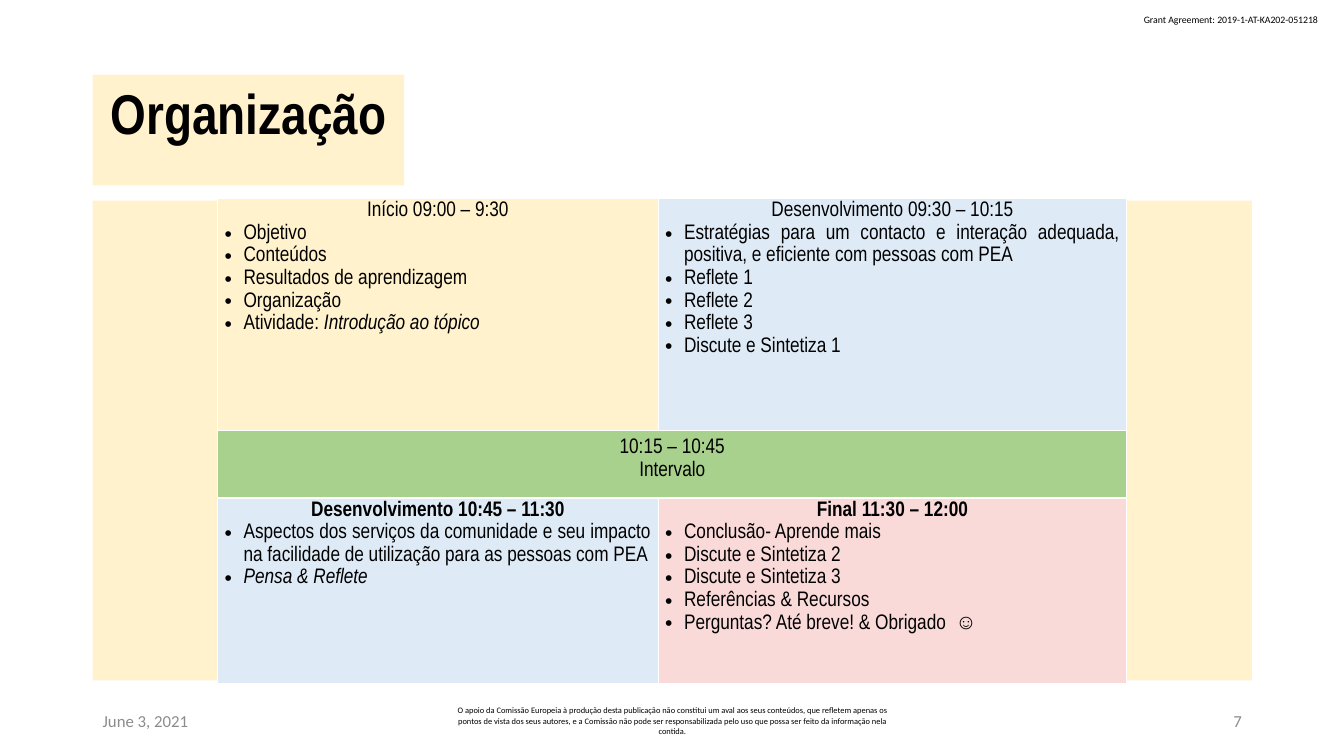
from dataclasses import dataclass

from lxml import etree
from pptx import Presentation
from pptx.dml.color import RGBColor
from pptx.enum import shapes, text
from pptx.oxml import ns
from pptx.util import Pt

BLACK = RGBColor(0x00, 0x00, 0x00)
GRAY = RGBColor(0x8C, 0x8C, 0x8C)
WHITE = RGBColor(0xFF, 0xFF, 0xFF)
CREAM = RGBColor(0xFF, 0xF2, 0xCC)
BLUE = RGBColor(0xDE, 0xEB, 0xF7)
GREEN = RGBColor(0xA9, 0xD1, 0x8E)
PINK = RGBColor(0xF9, 0xDA, 0xD9)

LEFT, CENTER, RIGHT, JUSTIFY = (
    text.PP_ALIGN.LEFT, text.PP_ALIGN.CENTER, text.PP_ALIGN.RIGHT, text.PP_ALIGN.JUSTIFY)
HEADING_FONT, SMALL_FONT = "Arial Narrow", "Calibri"
MARGIN = 66.24
BULLET_INDENT = 13.5


@dataclass
class Item:
    plain: str
    italic: str = ""


@dataclass
class Session:
    row: int
    column: int
    color: RGBColor
    headings: list[str]
    items: list[Item]
    bold: bool = False
    alignment: text.PP_ALIGN = LEFT


@dataclass
class Label:
    words: str
    left: float
    top: float
    width: float
    height: float
    size: float
    color: RGBColor
    alignment: text.PP_ALIGN
    wrap: bool = True


SESSIONS = [
    Session(0, 0, CREAM, ["Início 09:00 – 9:30"], [
        Item("Objetivo"), Item("Conteúdos"), Item("Resultados de aprendizagem"),
        Item("Organização"), Item("Atividade: ", "Introdução ao tópico")]),
    Session(0, 1, BLUE, ["Desenvolvimento 09:30 – 10:15"], [
        Item("Estratégias para um contacto e interação adequada, positiva, "
             "e eficiente com pessoas com PEA"),
        Item("Reflete 1"), Item("Reflete 2"), Item("Reflete 3"),
        Item("Discute e Sintetiza 1")], alignment=JUSTIFY),
    Session(1, 0, GREEN, ["10:15 – 10:45", "Intervalo"], []),
    Session(2, 0, BLUE, ["Desenvolvimento 10:45 – 11:30"], [
        Item("Aspectos dos serviços da comunidade e seu impacto na facilidade "
             "de utilização para as pessoas com PEA"),
        Item("", "Pensa & Reflete")], bold=True, alignment=JUSTIFY),
    Session(2, 1, PINK, ["Final 11:30 – 12:00"], [
        Item("Conclusão- Aprende mais"), Item("Discute e Sintetiza 2"),
        Item("Discute e Sintetiza 3"), Item("Referências & Recursos"),
        Item("Perguntas? Até breve! & Obrigado  ☺")], bold=True),
]

LABELS = [
    Label("Grant Agreement: 2019-1-AT-KA202-051218", 810, 5.76, 141.84, 15.84,
          7, BLACK, LEFT, wrap=False),
    Label("June 3, 2021", MARGIN, 500.4, 216, 28.8, 12, GRAY, LEFT),
    Label("O apoio da Comissão Europeia à produção desta publicação não constitui um aval "
          "aos seus conteúdos, que refletem apenas os pontos de vista dos seus autores, e a "
          "Comissão não pode ser responsabilizada pelo uso que possa ser feito da "
          "informação nela contida.", 318.24, 500.4, 324, 28.8, 6, BLACK, CENTER),
    Label("7", 678.24, 500.4, 216, 28.8, 12, GRAY, RIGHT),
]


def style(paragraph, name: str, size: float, color: RGBColor, bold: bool = False) -> None:
    font = paragraph.font
    font.name, font.size, font.bold = name, Pt(size), bold
    font.color.rgb = color


def add_bullet(paragraph) -> None:
    properties = paragraph._p.get_or_add_pPr()
    properties.set("marL", str(Pt(BULLET_INDENT)))
    properties.set("indent", str(-Pt(BULLET_INDENT)))
    etree.SubElement(properties, ns.qn("a:buFont"), typeface="Arial")
    etree.SubElement(properties, ns.qn("a:buChar"), char="•")


def add_borders(cell) -> None:
    properties = cell._tc.get_or_add_tcPr()
    for side in ("lnL", "lnR", "lnT", "lnB"):
        line = etree.SubElement(properties, ns.qn(f"a:{side}"), w=str(Pt(1)))
        fill = etree.SubElement(line, ns.qn("a:solidFill"))
        etree.SubElement(fill, ns.qn("a:srgbClr"), val=str(WHITE))


def fill_session(cell, session: Session) -> None:
    cell.fill.solid()
    cell.fill.fore_color.rgb = session.color
    side, edge = (5, 0) if session.items else (7.2, 3.6)
    cell.margin_left = cell.margin_right = Pt(side)
    cell.margin_top = cell.margin_bottom = Pt(edge)
    frame = cell.text_frame
    entries = [Item(heading) for heading in session.headings] + session.items
    for index, item in enumerate(entries):
        paragraph = frame.paragraphs[0] if index == 0 else frame.add_paragraph()
        is_heading = index < len(session.headings)
        paragraph.alignment = CENTER if is_heading else session.alignment
        paragraph.line_spacing = 1.15
        if not is_heading:
            add_bullet(paragraph)
        style(paragraph, HEADING_FONT, 15, BLACK, is_heading and session.bold)
        if item.plain:
            paragraph.add_run().text = item.plain
        if item.italic:
            run = paragraph.add_run()
            run.text = item.italic
            run.font.italic = True


def add_schedule(slide) -> None:
    widths, heights = (314.64, 334.8), (165.6, 48.24, 132.48)
    frame = slide.shapes.add_table(
        len(heights), len(widths), Pt(155.52), Pt(141.84), Pt(sum(widths)), Pt(sum(heights)))
    table = frame.table
    table.first_row = table.horz_banding = False
    for column, width in zip(table.columns, widths):
        column.width = Pt(width)
    for row, height in zip(table.rows, heights):
        row.height = Pt(height)
    table.cell(1, 0).merge(table.cell(1, 1))
    for cell in table.iter_cells():
        add_borders(cell)
    for session in SESSIONS:
        fill_session(table.cell(session.row, session.column), session)


def add_label(slide, label: Label) -> None:
    box = slide.shapes.add_textbox(
        Pt(label.left), Pt(label.top), Pt(label.width), Pt(label.height))
    frame = box.text_frame
    frame.word_wrap = label.wrap
    frame.vertical_anchor = text.MSO_ANCHOR.MIDDLE
    paragraph = frame.paragraphs[0]
    paragraph.text = label.words
    paragraph.alignment = label.alignment
    style(paragraph, SMALL_FONT, label.size, label.color)


def format_title(title) -> None:
    title.left, title.top, title.width, title.height = (
        Pt(MARGIN), Pt(53.28), Pt(222.48), Pt(79.2))
    title.fill.solid()
    title.fill.fore_color.rgb = CREAM
    frame = title.text_frame
    frame.auto_size = text.MSO_AUTO_SIZE.NONE
    frame.word_wrap = True
    frame.vertical_anchor = text.MSO_ANCHOR.TOP
    frame.margin_left = frame.margin_right = Pt(9)
    frame.margin_top = frame.margin_bottom = Pt(3)
    paragraph = frame.paragraphs[0]
    paragraph.text = "Organização"
    paragraph.alignment = CENTER
    paragraph.line_spacing = 1.0
    style(paragraph, HEADING_FONT, 40, BLACK, bold=True)


def main() -> None:
    presentation = Presentation()
    presentation.slide_width, presentation.slide_height = Pt(960), Pt(540)
    slide = presentation.slides.add_slide(presentation.slide_layouts[5])
    format_title(slide.shapes.title)
    panel = slide.shapes.add_shape(
        shapes.MSO_SHAPE.RECTANGLE, Pt(MARGIN), Pt(143.28), Pt(828), Pt(342.72))
    panel.shadow.inherit = False
    panel.fill.solid()
    panel.fill.fore_color.rgb = CREAM
    panel.line.fill.background()
    add_schedule(slide)
    for label in LABELS:
        add_label(slide, label)
    presentation.save("out.pptx")


if __name__ == "__main__":
    main()
